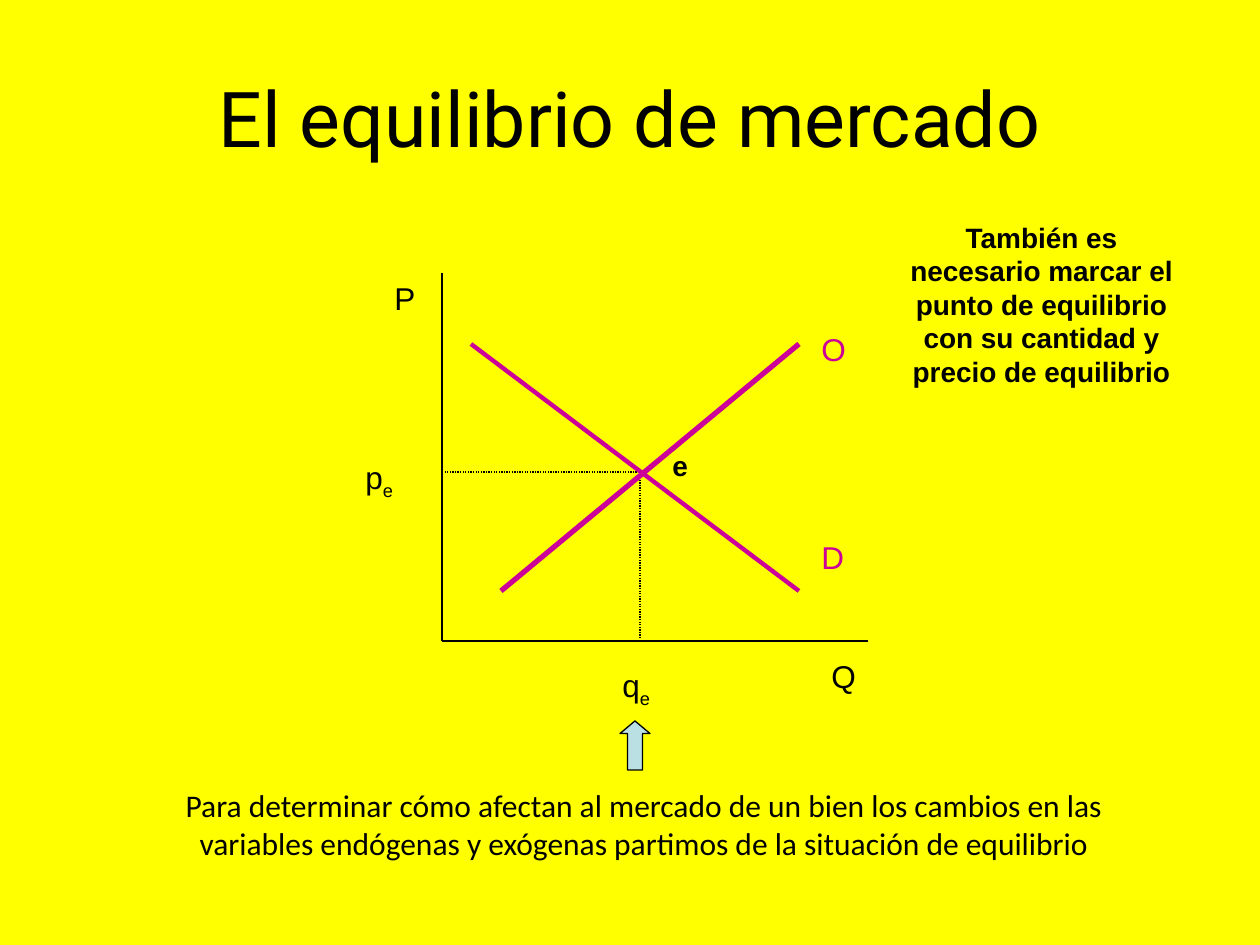
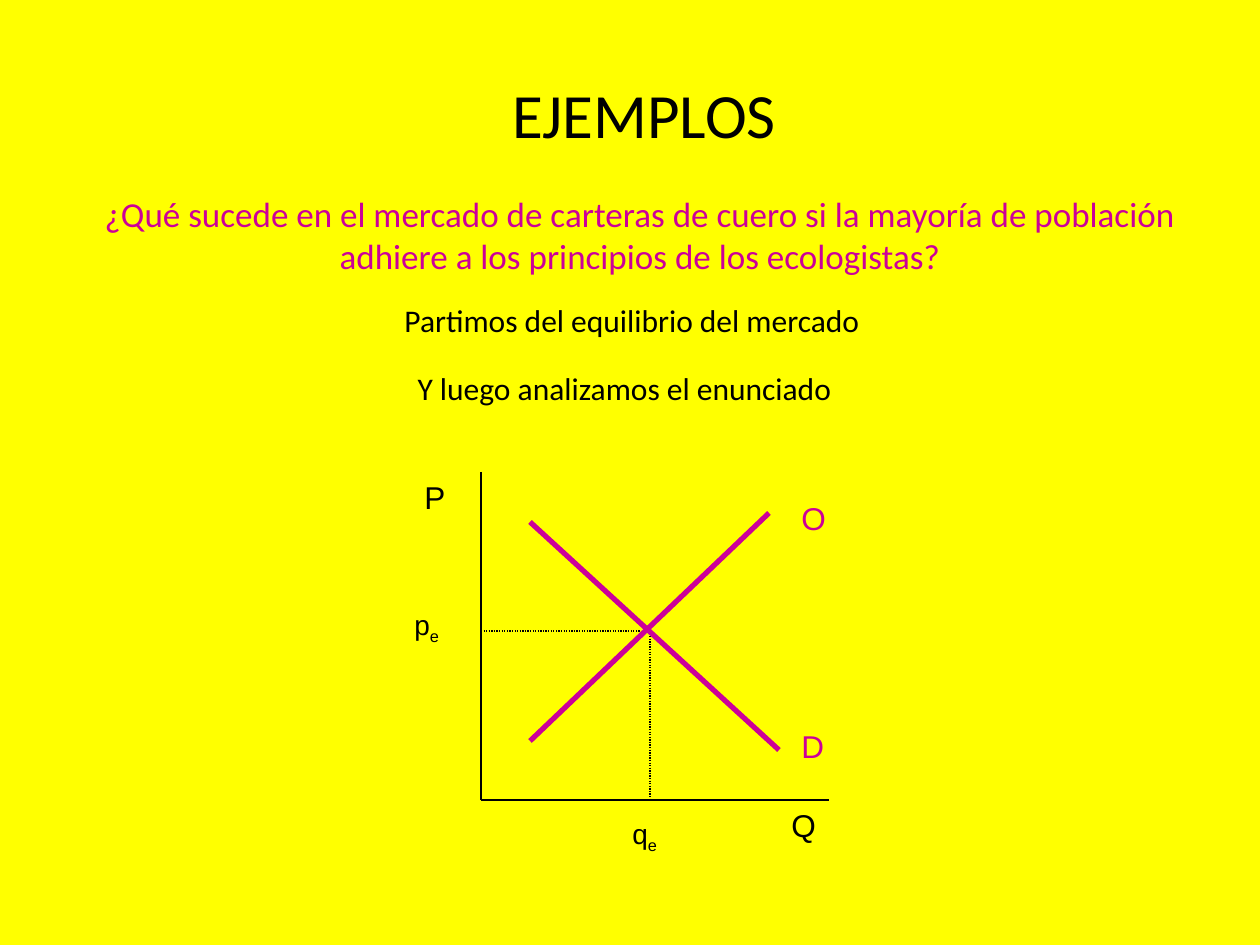
from dataclasses import dataclass

from lxml.etree import SubElement
from pptx import Presentation
from pptx.dml.color import RGBColor
from pptx.enum.dml import MSO_LINE
from pptx.enum.shapes import MSO_CONNECTOR, MSO_SHAPE
from pptx.enum.text import MSO_ANCHOR as Anchor, PP_ALIGN as Align
from pptx.oxml.ns import qn
from pptx.util import Emu, Pt

EMU_PER_PX = 914400 / 126


@dataclass(frozen=True)
class Theme:
    background: str = "FFFF00"
    ink: str = "000000"
    curve: str = "CC0099"
    arrow: str = "BBE0E3"
    title_font: str = "Roboto"
    body_font: str = "Calibri"
    graph_font: str = "Arial"
    title_size: int = 44
    heading_size: int = 36
    question_size: int = 20
    body_size: int = 18
    small_size: int = 16
    thin: float = 0.75
    medium: float = 2.5
    thick: float = 3


THEME = Theme()


@dataclass(frozen=True)
class Market:
    origin: tuple
    price_top: int
    quantity_end: int
    equilibrium: tuple
    price_guide_end: int
    demand: tuple
    supply: tuple
    demand_width: float
    equilibrium_size: int
    labels: dict


def px(*lengths):
    return [Emu(round(length * EMU_PER_PX)) for length in lengths]


def rgb(color):
    return RGBColor.from_string(color)


def add_slide(deck):
    slide = deck.slides.add_slide(deck.slide_layouts[6])
    slide.background.fill.solid()
    slide.background.fill.fore_color.rgb = rgb(THEME.background)
    return slide


def add_text(slide, box, words, size=THEME.body_size, font=THEME.body_font,
             color=THEME.ink, bold=False, align=Align.CENTER,
             anchor=Anchor.TOP, subscript=""):
    frame = slide.shapes.add_textbox(*px(*box)).text_frame
    frame.word_wrap = True
    frame.vertical_anchor = anchor
    paragraph = frame.paragraphs[0]
    paragraph.alignment = align
    for part in filter(None, (words, subscript)):
        run = paragraph.add_run()
        run.text = part
        run.font.name = font
        run.font.size = Pt(size)
        run.font.bold = bold
        run.font.color.rgb = rgb(color)
    if subscript:
        run.font._element.set("baseline", "-25000")


def add_label(slide, box, letter, **style):
    add_text(slide, box, letter, font=THEME.graph_font, align=Align.LEFT, **style)


def add_line(slide, start, end, color=THEME.ink, width=THEME.thin, dash=None):
    segment = slide.shapes.add_connector(MSO_CONNECTOR.STRAIGHT, *px(*start, *end))
    segment.line.color.rgb = rgb(color)
    segment.line.width = Pt(width)
    if dash:
        segment.line.dash_style = dash
    SubElement(segment._element.spPr, qn("a:effectLst"))


def add_up_arrow(slide, box):
    arrow = slide.shapes.add_shape(MSO_SHAPE.UP_ARROW, *px(*box))
    arrow.adjustments[1] = 0.42
    arrow.shadow.inherit = False
    arrow.fill.solid()
    arrow.fill.fore_color.rgb = rgb(THEME.arrow)
    arrow.line.color.rgb = rgb(THEME.ink)
    arrow.line.width = Pt(THEME.thin)


def add_market(slide, market):
    axis_x, axis_y = market.origin
    quantity, price = market.equilibrium
    add_line(slide, (axis_x, market.price_top), market.origin)
    add_line(slide, market.origin, (market.quantity_end, axis_y))
    add_line(slide, (axis_x, price), (market.price_guide_end, price),
             dash=MSO_LINE.ROUND_DOT)
    add_line(slide, market.equilibrium, (quantity, axis_y), dash=MSO_LINE.ROUND_DOT)
    add_line(slide, *market.demand, THEME.curve, market.demand_width)
    add_line(slide, *market.supply, THEME.curve, THEME.thick)
    for letter in "PQ":
        add_label(slide, market.labels[letter], letter)
    for letter in "OD":
        add_label(slide, market.labels[letter], letter, color=THEME.curve)
    for letter in "pq":
        add_label(slide, market.labels[letter], letter, subscript="e",
                  size=market.equilibrium_size)


def build_equilibrium(deck):
    slide = add_slide(deck)
    add_text(slide, (63, 38, 1134, 158), "El equilibrio de mercado",
             THEME.title_size, THEME.title_font, anchor=Anchor.MIDDLE)
    add_market(slide, Market(
        origin=(442, 641), price_top=273, quantity_end=868,
        equilibrium=(640, 472), price_guide_end=640,
        demand=((471, 344), (799, 591)), supply=((501, 591), (799, 344)),
        demand_width=THEME.medium, equilibrium_size=THEME.body_size,
        labels={
            "P": (382, 273, 49, 50), "Q": (819, 651, 59, 50),
            "O": (809, 324, 69, 50), "D": (809, 532, 49, 50),
            "p": (353, 452, 59, 50), "q": (610, 660, 79, 50),
        }))
    add_label(slide, (660, 442, 49, 47), "e", size=THEME.small_size, bold=True)
    add_text(slide, (113, 780, 1062, 88),
             "Para determinar cómo afectan al mercado de un bien los cambios en las "
             "variables endógenas y exógenas partimos de la situación de equilibrio")
    add_up_arrow(slide, (620, 721, 30, 49))
    add_text(slide, (888, 214, 307, 181),
             "También es necesario marcar el punto de equilibrio con su cantidad "
             "y precio de equilibrio",
             THEME.small_size, THEME.graph_font, bold=True)


def build_examples(deck):
    slide = add_slide(deck)
    add_text(slide, (137, 69, 1014, 89), "EJEMPLOS", THEME.heading_size)
    add_text(slide, (69, 186, 1142, 97),
             "¿Qué sucede en el mercado de carteras de cuero si la mayoría de "
             "población adhiere a los principios de los ecologistas?",
             THEME.question_size, color=THEME.curve)
    add_text(slide, (295, 295, 674, 50), "Partimos del equilibrio del mercado")
    add_text(slide, (302, 363, 645, 50), "Y luego analizamos el enunciado")
    add_market(slide, Market(
        origin=(481, 800), price_top=472, quantity_end=829,
        equilibrium=(650, 631), price_guide_end=640,
        demand=((530, 522), (779, 750)), supply=((530, 741), (769, 513)),
        demand_width=THEME.thick, equilibrium_size=THEME.small_size,
        labels={
            "P": (412, 472, 49, 50), "Q": (779, 800, 79, 50),
            "O": (789, 493, 59, 50), "D": (789, 721, 49, 50),
            "p": (402, 601, 59, 47), "q": (620, 810, 79, 47),
        }))


def main():
    deck = Presentation()
    deck.slide_width, deck.slide_height = px(1260, 945)
    build_equilibrium(deck)
    build_examples(deck)
    deck.save("out.pptx")


if __name__ == "__main__":
    main()
